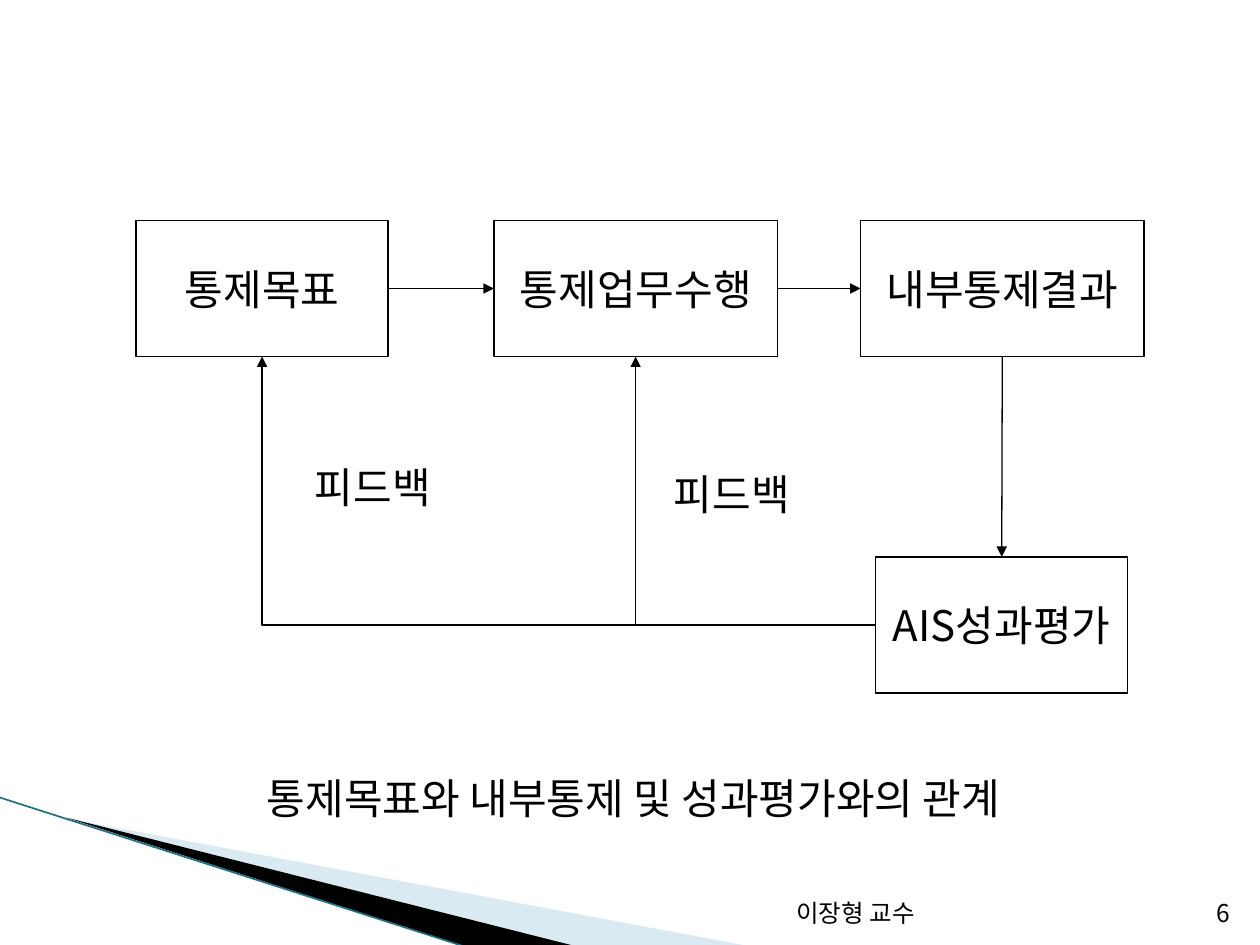
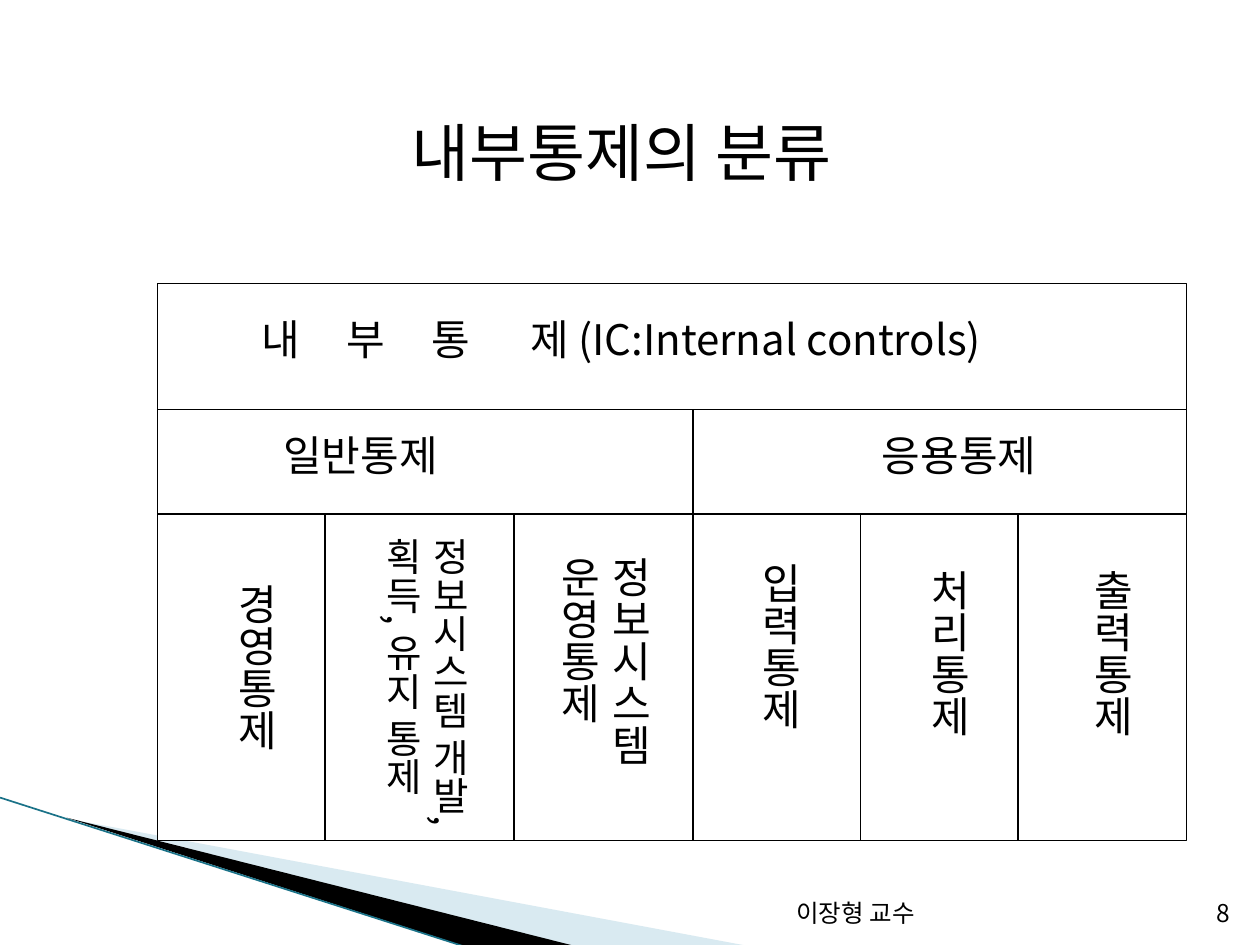
from pptx import Presentation
from pptx.util import Inches as In, Pt
from pptx.dml.color import RGBColor
from pptx.enum.shapes import MSO_SHAPE as SHAPE, MSO_CONNECTOR as CONN
from pptx.enum.text import PP_ALIGN as AL, MSO_ANCHOR as ANC, MSO_AUTO_SIZE as AUTO
from pptx.oxml.ns import qn
from lxml.etree import SubElement

# Shared style
W, H = 10, 7.5
FONT = "Noto Sans CJK KR"
BLACK, WHITE, PALE, TEAL = "000000", "FFFFFF", "A0CBDC", "1A7288"
BANDS = [  # outline, fill, opacity in percent
    ([(0.55, 6.5), (5.95, 7.51), (4.56, 7.51)], PALE, 40),
    ([(0.53, 6.49), (4.57, 7.51), (3.72, 7.52)], BLACK, 100),
]
BAND_EDGE = (0, 6.33, 3.71, 7.52)
FOOTER, FOOTER_TOP, FOOTER_H = "이장형 교수", 7.01, 0.4

# Slide 1: boxes as name: (text, left, top, width)
BOX_H, TOP_ROW, LOW_ROW = 1.08, 1.75, 4.42
FLOW_BOXES = {
    "goal": ("통제목표", 1.08, TOP_ROW, 2),
    "review": ("AIS성과평가", 6.95, LOW_ROW, 2),
    "work": ("통제업무수행", 3.92, TOP_ROW, 2.25),
    "result": ("내부통제결과", 6.83, TOP_ROW, 2.25),
}
FORWARD = [("goal", "work"), ("work", "result")]
FEEDBACK = [("review", "goal"), ("review", "work")]
FLOW_LABELS = [
    ("피드백", 2.4, 3.61, 1.2),
    ("피드백", 5.25, 3.67, 1.2),
    ("통제목표와 내부통제 및 성과평가와의 관계", 2.02, 6.08, 6.65),
]

# Slide 2: chart of control classes
TITLE = ("내부통제의 분류", 3.17, 0.85, 3.87)
ROWS = [2.25, 3.25, 4.08, 6.67]
COLS = [1.25, 2.58, 4.08, 5.5, 6.83, 8.08, 9.42]
MIDDLE = 3  # column edge between general and application controls
HEADING = ("내\t부\t통\t제 (IC:Internal controls)", 1.98, 2.44, 6.29)
HEADING_TABS = [0.67, 1.35, 2.13]
GROUPS = [("일반통제", 2.15), ("응용통제", 6.9)]
CLASSES = [  # lines, left, top, width, height, size
    (["경영통제"], 1.68, 4.53, 0.6, 1.43, 24),
    (["정보시스템 개발,", "획득, 유지 통제"], 2.87, 4.17, 0.93, 2.44, 22),
    (["정보시스템", "운영통제"], 4.25, 4.32, 1, 1.77, 24),
    (["입력통제"], 5.84, 4.37, 0.6, 1.43, 24),
    (["처리통제"], 7.18, 4.42, 0.6, 1.43, 24),
    (["출력통제"], 8.48, 4.42, 0.6, 1.43, 24),
]


def rgb(hex_code):
    return RGBColor.from_string(hex_code)


def write(tf, lines, size, align=AL.LEFT, tabs=(), **fmt):
    """Fill a text frame, one paragraph a line."""
    for name, value in fmt.items():
        setattr(tf, name, value)
    for i, line in enumerate(lines):
        p = tf.paragraphs[0] if i == 0 else tf.add_paragraph()
        p.alignment = align
        if tabs:
            tab_list = SubElement(p._p.get_or_add_pPr(), qn("a:tabLst"))
            for pos in tabs:
                SubElement(tab_list, qn("a:tab"), pos=str(In(pos)), algn="l")
        r = p.add_run()
        r.text = line
        for name, value in dict(name=FONT, size=Pt(size)).items():
            setattr(r.font, name, value)
        r.font.color.rgb = rgb(BLACK)
        SubElement(r._r.get_or_add_rPr(), qn("a:ea"), typeface=FONT)


def label(s, lines, x, y, w, h=0.5, size=24, vertical=False, **fmt):
    tf = s.shapes.add_textbox(In(x), In(y), In(w), In(h)).text_frame
    write(tf, lines, size, **{"word_wrap": False, "auto_size": AUTO.SHAPE_TO_FIT_TEXT, **fmt})
    if vertical:
        tf._txBody.bodyPr.set("vert", "eaVert")


def line(s, x1, y1, x2, y2, color=BLACK, width=0.75, arrow=False):
    c = s.shapes.add_connector(CONN.STRAIGHT, In(x1), In(y1), In(x2), In(y2))
    c.line.color.rgb = rgb(color)
    c.line.width = Pt(width)
    if arrow:
        SubElement(c.line._get_or_add_ln(), qn("a:tailEnd"), type="triangle")
    SubElement(c._element.spPr, qn("a:effectLst"))
    return c


def elbow(s, x1, y1, x2, y2):
    """Arrow that runs left from (x1, y1), then up to (x2, y2)."""
    c = line(s, x2, y2, x1, y1, arrow=True)
    sp_pr = c._element.spPr
    sp_pr.find(qn("a:prstGeom")).set("prst", "bentConnector2")
    sp_pr.find(qn("a:xfrm")).set("rot", str(180 * 60000))


def box(s, x, y, w, h):
    sp = s.shapes.add_shape(SHAPE.RECTANGLE, In(x), In(y), In(w), In(h))
    sp.shadow.inherit = False
    sp.fill.solid()
    sp.fill.fore_color.rgb = rgb(WHITE)
    sp.line.color.rgb = rgb(BLACK)
    sp.line.width = Pt(0.75)
    return sp


def new_slide(prs):
    """Blank slide with the corner bands."""
    s = prs.slides.add_slide(prs.slide_layouts[6])
    for points, color, opacity in BANDS:
        start, *rest = [(x * 100, y * 100) for x, y in points]
        builder = s.shapes.build_freeform(*start, scale=In(1) / 100)
        builder.add_line_segments(rest, close=True)
        sp = builder.convert_to_shape()
        sp.shadow.inherit = False
        sp.line.fill.background()
        sp.fill.solid()
        sp.fill.fore_color.rgb = rgb(color)
        if opacity < 100:
            clr = sp._element.spPr.find(qn("a:solidFill"))[0]
            SubElement(clr, qn("a:alpha"), val=str(opacity * 1000))
    line(s, *BAND_EDGE, color=TEAL, width=0.95)
    return s


def footer(s, number):
    for text, x, w in [(FOOTER, 4.79, 2.57), (number, 9.46, 0.4)]:
        label(s, [text], x, FOOTER_TOP, w, FOOTER_H, 14, align=AL.RIGHT,
              word_wrap=True, auto_size=AUTO.NONE, vertical_anchor=ANC.BOTTOM)


def flow_slide(prs):
    s = new_slide(prs)
    for text, x, y, w in FLOW_BOXES.values():
        write(box(s, x, y, w, BOX_H).text_frame, [text], 24, AL.CENTER,
              word_wrap=False, vertical_anchor=ANC.MIDDLE)

    def middle(name):
        _, x, y, w = FLOW_BOXES[name]
        return x + w / 2, y + BOX_H / 2

    # Forward steps, then the drop to the review
    for a, b in FORWARD:
        y = middle(a)[1]
        line(s, FLOW_BOXES[a][1] + FLOW_BOXES[a][3], y, FLOW_BOXES[b][1], y, arrow=True)
    line(s, middle("result")[0], TOP_ROW + BOX_H, middle("review")[0], LOW_ROW, arrow=True)
    for a, b in FEEDBACK:
        elbow(s, FLOW_BOXES[a][1], middle(a)[1], middle(b)[0], TOP_ROW + BOX_H)
    for text, *place in FLOW_LABELS:
        label(s, [text], *place)
    footer(s, "6")


def classes_slide(prs):
    s = new_slide(prs)
    left, right, top, bottom = COLS[0], COLS[-1], ROWS[0], ROWS[-1]
    # Frame and rules
    box(s, left, top, right - left, bottom - top)
    for y in ROWS[1:-1]:
        line(s, left, y, right, y)
    for i, x in enumerate(COLS[1:-1], 1):
        line(s, x, ROWS[1 if i == MIDDLE else 2], x, bottom)
    # Texts
    text, *place = HEADING
    label(s, [text], *place, tabs=HEADING_TABS, word_wrap=True)
    for text, x in GROUPS:
        label(s, [text], x, 3.36, 1.53)
    for lines, *place in CLASSES:
        label(s, lines, *place, vertical=True)
    text, *place = TITLE
    label(s, [text], *place, h=0.7, size=36)
    footer(s, "8")


def main():
    prs = Presentation()
    prs.slide_width, prs.slide_height = In(W), In(H)
    flow_slide(prs)
    classes_slide(prs)
    prs.save("out.pptx")


if __name__ == "__main__":
    main()
